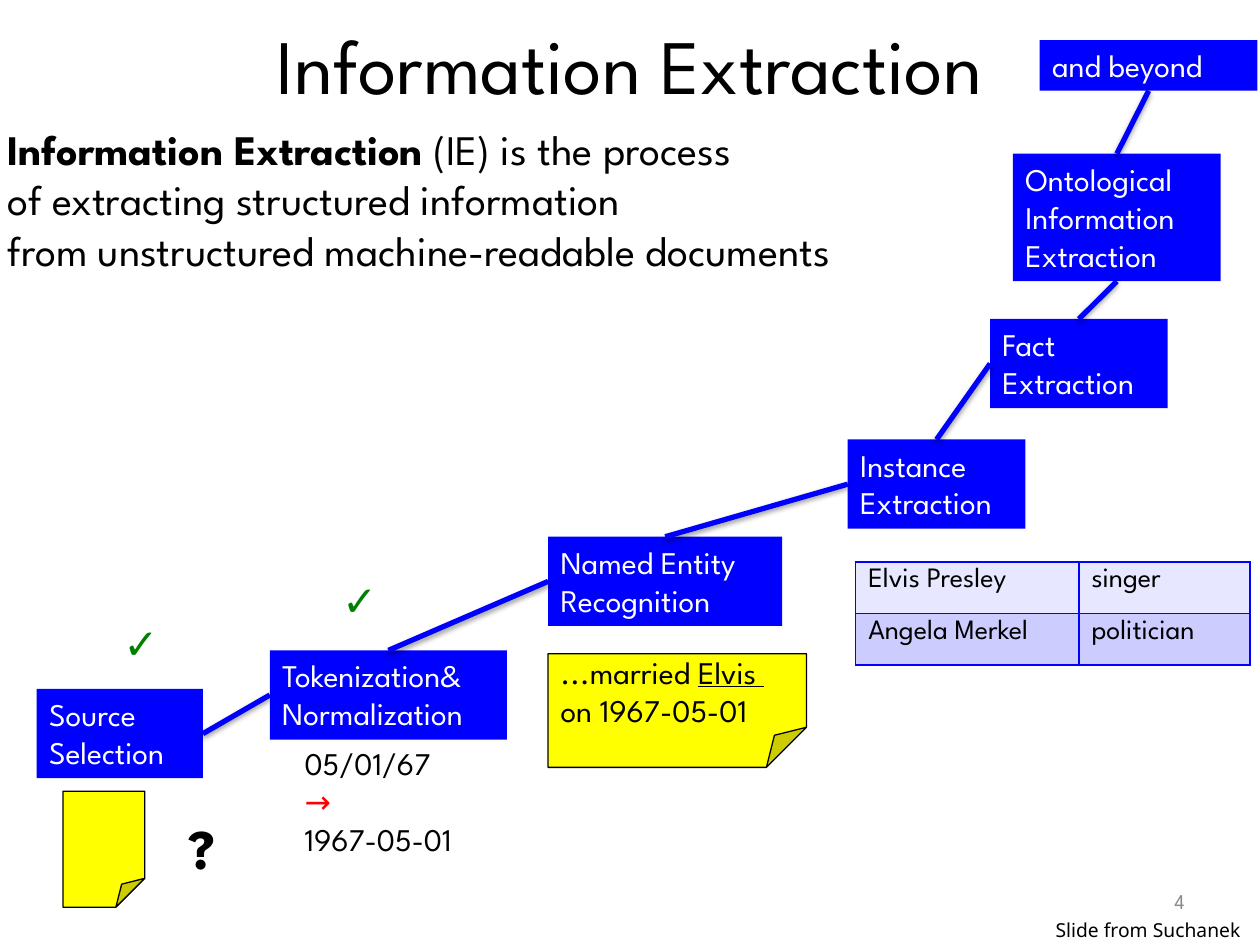
from itertools import pairwise

from lxml import etree
from pptx import Presentation
from pptx.dml.color import RGBColor
from pptx.enum.shapes import MSO_CONNECTOR, MSO_SHAPE
from pptx.enum.text import MSO_ANCHOR, PP_ALIGN
from pptx.oxml import parse_xml
from pptx.oxml.ns import nsdecls, qn
from pptx.util import Cm, Pt

RECT, NOTE = MSO_SHAPE.RECTANGLE, MSO_SHAPE.FOLDED_CORNER
LINE = MSO_CONNECTOR.STRAIGHT
TOP, MID = MSO_ANCHOR.TOP, MSO_ANCHOR.MIDDLE
LEFT, CENTER, RIGHT = PP_ALIGN.LEFT, PP_ALIGN.CENTER, PP_ALIGN.RIGHT
FONT = "League Spartan"
HUES = {
    "black": "000000", "white": "FFFFFF", "blue": "0000FF", "edge": "0001FF",
    "yellow": "FFFF00", "red": "FF0000", "green": "008000", "gray": "8C8C8C",
    "pale": "E7E7FF", "lilac": "CCCCFF",
}
STEPS = [
    (0.74, 13.89, 3.35, 1.8, ["Source", "Selection"]),
    (5.44, 13.11, 4.78, 1.8, ["Tokenization&", "Normalization"]),
    (11.05, 10.82, 4.72, 1.8, ["Named Entity", "Recognition"]),
    (17.09, 8.86, 3.58, 1.8, ["Instance", "Extraction"]),
    (19.96, 6.43, 3.58, 1.8, ["Fact", "Extraction"]),
    (20.42, 3.1, 4.19, 2.57, ["Ontological", "Information", "Extraction"]),
    (20.96, 0.81, 4.39, 1.02, ["and beyond"]),
]
JOINS = [(3, 1), (0, 1), (0, 1), (0, 1), (0, 2), (0, 2)]
FACTS = [("Elvis Presley", "singer"), ("Angela Merkel", "politician")]


def tint(name):
    """Return the named colour."""
    return RGBColor.from_string(HUES[name])


def write(frame, lines, size=18, font=FONT, hue="black", bold=False,
          align=LEFT, anchor=TOP):
    """Fill a text frame; a line is a string or a list of (text, changes)."""
    frame.word_wrap = True
    frame.vertical_anchor = anchor
    for i, line in enumerate(lines):
        para = frame.add_paragraph() if i else frame.paragraphs[0]
        para.alignment = align
        for text, diff in [(line, {})] if isinstance(line, str) else line:
            run = para.add_run()
            run.text = text
            face = run.font
            face.name, face.size = font, Pt(size)
            face.bold = diff.get("bold", bold)
            face.underline = diff.get("under")
            face.color.rgb = tint(diff.get("hue", hue))


def label(slide, box, lines, **style):
    """Add a text box."""
    area = slide.shapes.add_textbox(*map(Cm, box))
    write(area.text_frame, lines, **style)


def block(slide, kind, box, fill, edge=None):
    """Add a filled shape with an optional thin outline."""
    shape = slide.shapes.add_shape(kind, *map(Cm, box))
    shape.shadow.inherit = False
    shape.fill.solid()
    shape.fill.fore_color.rgb = tint(fill)
    if edge:
        shape.line.color.rgb = tint(edge)
        shape.line.width = Pt(0.75)
    else:
        shape.line.fill.background()
    return shape


def note(slide, box):
    """Add a yellow sheet with a folded corner."""
    shape = block(slide, NOTE, box, "yellow", "black")
    guides = shape._element.spPr.find(f'{qn("a:prstGeom")}/{qn("a:avLst")}')
    etree.SubElement(guides, qn("a:gd"), name="adj", fmla="val 35300")
    return shape


def link(slide, start, end, sides):
    """Join two blocks with a softly shadowed line."""
    line = slide.shapes.add_connector(LINE, 0, 0, 0, 0)
    line.begin_connect(start, sides[0])
    line.end_connect(end, sides[1])
    line.line.color.rgb = tint("blue")
    line.line.width = Pt(3)
    line._element.spPr.append(parse_xml(
        f'<a:effectLst {nsdecls("a")}><a:outerShdw blurRad="{Pt(3.1)}" '
        f'dist="{Pt(1.6)}" dir="5400000" rotWithShape="0">'
        f'<a:srgbClr val="{HUES["black"]}"><a:alpha val="38000"/></a:srgbClr>'
        '</a:outerShdw></a:effectLst>'))


def frame(cell):
    """Draw the four borders of a cell."""
    props = cell._tc.get_or_add_tcPr()
    for i, side in enumerate(("lnL", "lnR", "lnT", "lnB")):
        edge = etree.Element(qn(f"a:{side}"), w=str(Pt(1)))
        fill = etree.SubElement(edge, qn("a:solidFill"))
        etree.SubElement(fill, qn("a:srgbClr"), val=HUES["edge"])
        props.insert(i, edge)


def grid(slide, left, top, widths, height, rows):
    """Add the table of people and their roles."""
    size = sum(widths), height * len(rows)
    table = slide.shapes.add_table(
        len(rows), len(widths), *map(Cm, (left, top, *size))).table
    for col, width in zip(table.columns, widths):
        col.width = Cm(width)
    for r, (row, fill) in enumerate(zip(rows, ("pale", "lilac"))):
        for c, text in enumerate(row):
            cell = table.cell(r, c)
            write(cell.text_frame, [text], size=16)
            cell.fill.solid()
            cell.fill.fore_color.rgb = tint(fill)
            frame(cell)


def main():
    """Build the slide and save it."""
    deck = Presentation()
    deck.slide_width, deck.slide_height = Cm(25.4), Cm(19.05)
    slide = deck.slides.add_slide(deck.slide_layouts[5])

    title = slide.shapes.title
    title.left, title.top, title.width, title.height = map(
        Cm, (1.27, 0, 22.86, 2.57))
    write(title.text_frame, ["Information Extraction"], size=44,
          align=CENTER, anchor=MID)

    steps = []
    for *box, lines in STEPS:
        step = block(slide, RECT, box, "blue")
        write(step.text_frame, lines, hue="white")
        steps.append(step)
    for (start, end), sides in zip(pairwise(steps), JOINS):
        link(slide, start, end, sides)

    note(slide, (1.27, 15.95, 1.65, 2.34))
    label(slide, (3.56, 16.28, 1.14, 1.63), ["?"], size=32, bold=True)
    label(slide, (5.89, 14.88, 3.78, 2.57),
          ["05/01/67", [("→", {"hue": "red"})], "1967-05-01"])
    quote = note(slide, (11.05, 13.18, 5.21, 2.29))
    write(quote.text_frame,
          [[("...married ", {}), ("Elvis ", {"under": True})],
           "on 1967-05-01"], anchor=MID)
    grid(slide, 17.25, 11.33, (4.5, 3.45), 1.04, FACTS)

    for left, top in ((2.24, 12.32), (6.65, 11.46)):
        label(slide, (left, top, 1.19, 1.27), ["✓"], size=24, font="Arial",
              hue="green", bold=True)
    label(slide, (18.21, 17.65, 5.92, 1.02), ["4"], size=12, hue="gray",
          align=RIGHT, anchor=MID)
    label(slide, (-0.1, 2.36, 22.35, 3.33),
          [[("Information Extraction", {"bold": True}),
            (" (IE) is the process", {})],
           "of extracting structured information",
           "from unstructured machine-readable documents"], size=24)
    label(slide, (21.03, 18.39, 4.37, 0.74), ["Slide from Suchanek"],
          size=11, font="Noto Sans")
    deck.save("out.pptx")


if __name__ == "__main__":
    main()
